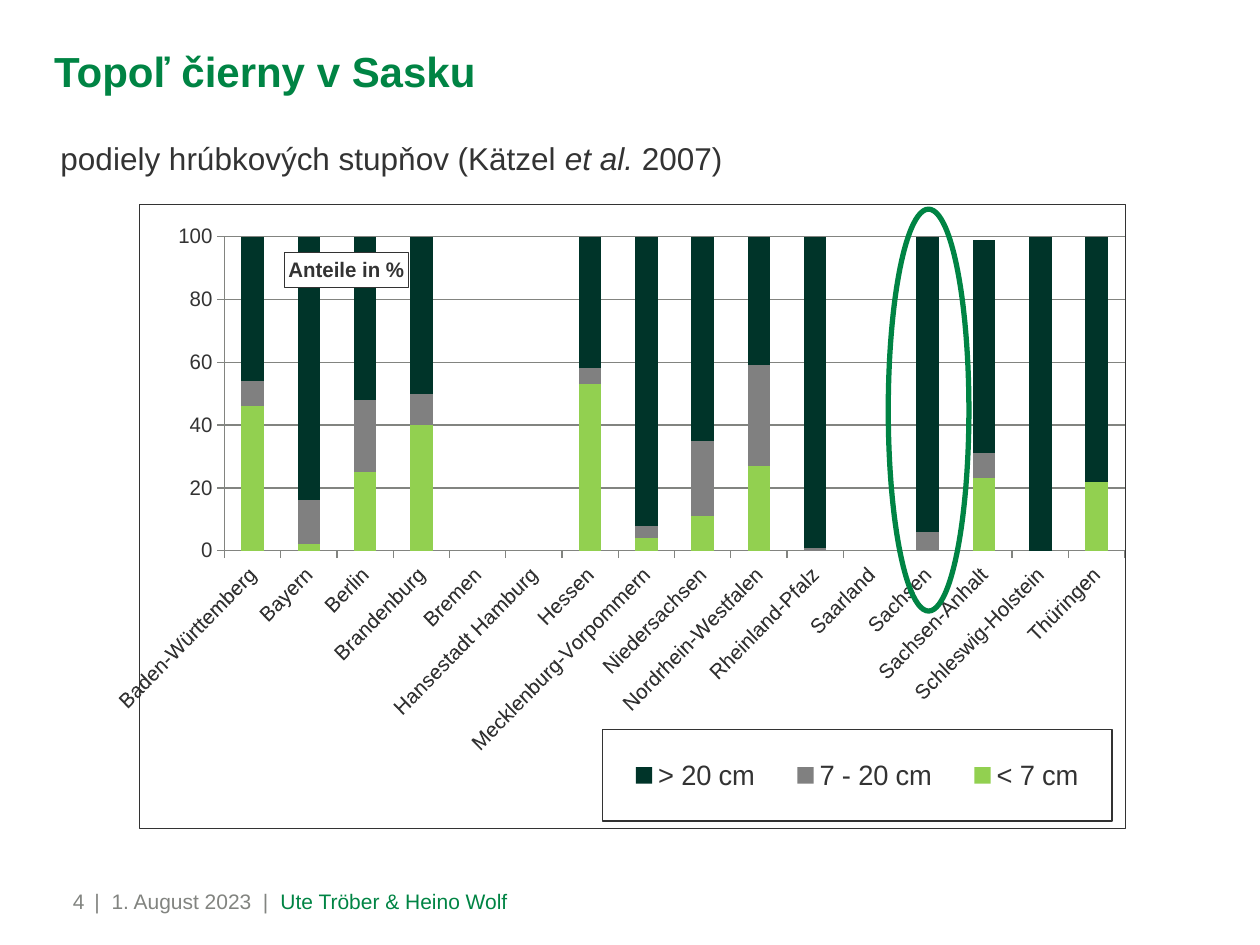
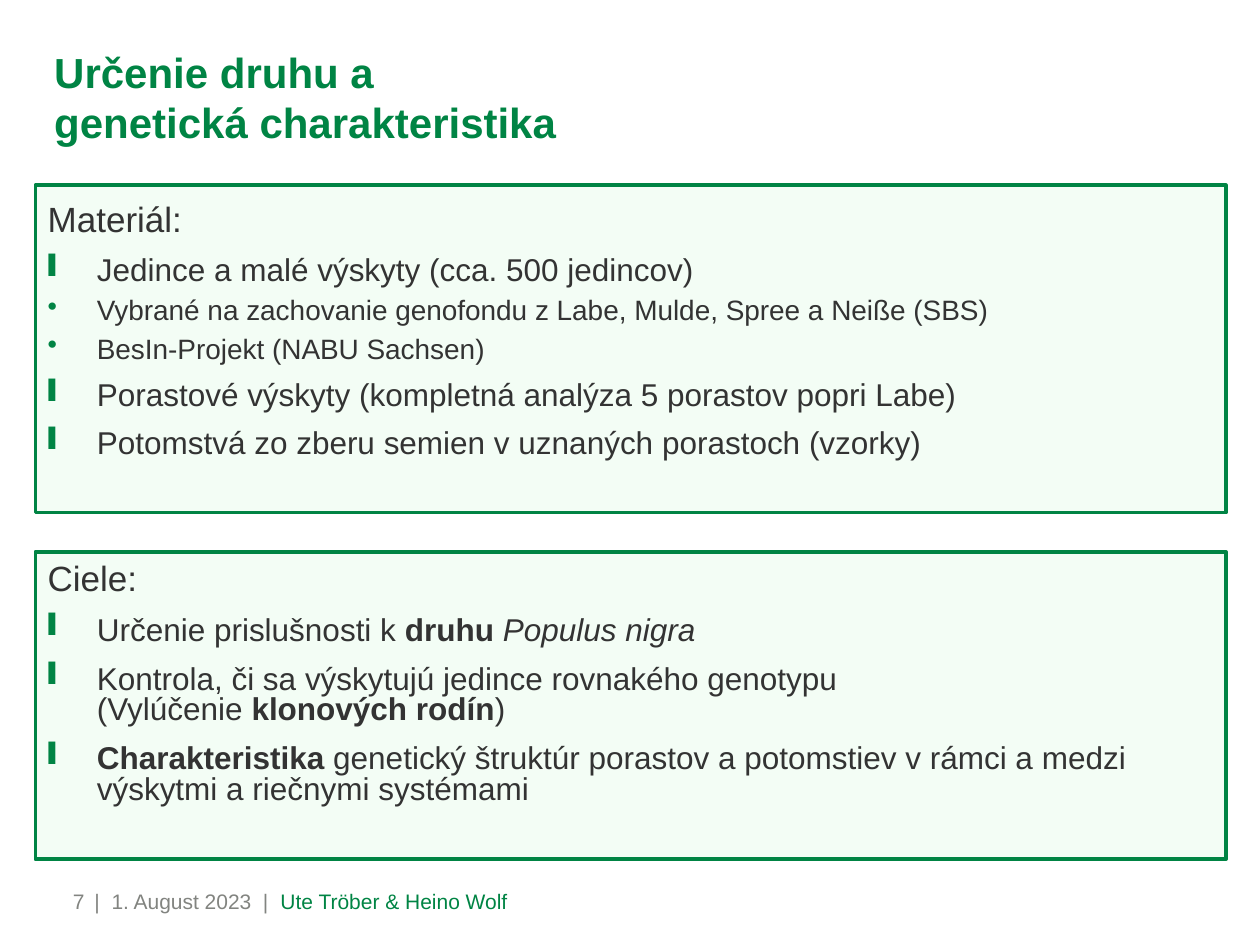
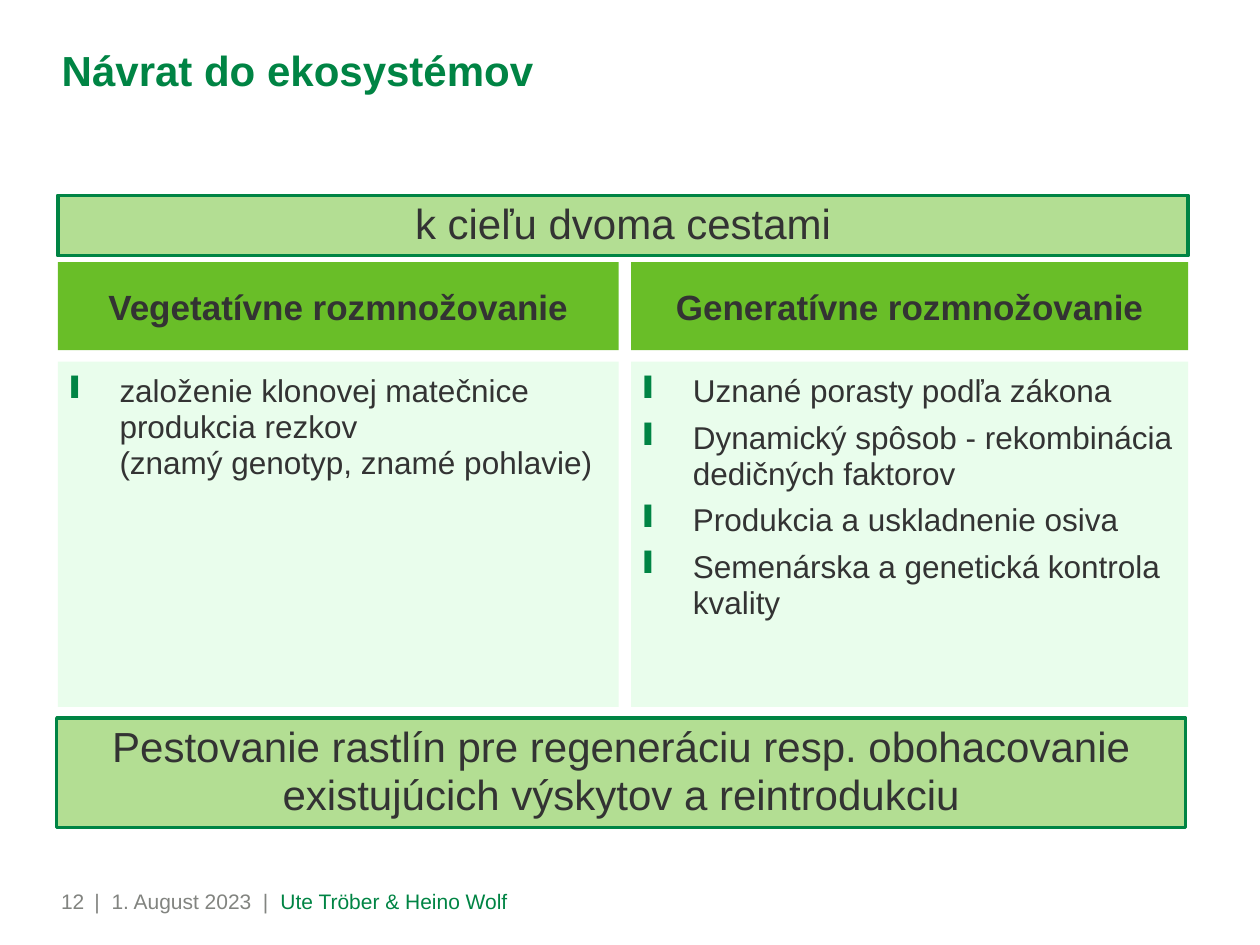
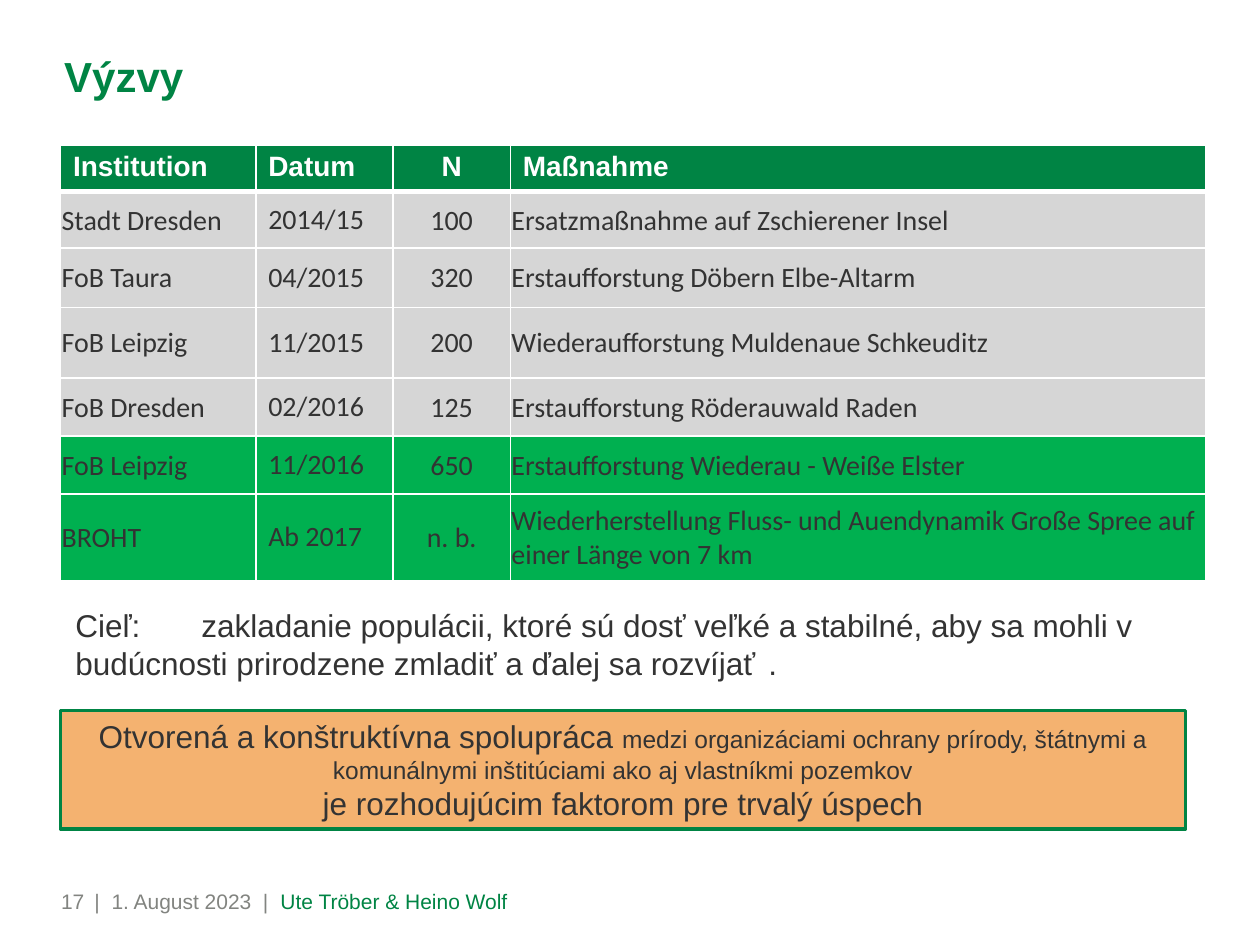
from dataclasses import dataclass
from typing import Optional

from lxml.etree import SubElement
from pptx import Presentation
from pptx.chart.data import CategoryChartData
from pptx.dml.color import RGBColor
from pptx.enum.chart import XL_CHART_TYPE, XL_LEGEND_POSITION, XL_TICK_MARK
from pptx.enum.shapes import MSO_SHAPE
from pptx.enum.text import MSO_ANCHOR, PP_ALIGN
from pptx.oxml import parse_xml
from pptx.oxml.ns import nsdecls, qn
from pptx.util import Inches, Pt

# Shared colours and fonts
GREEN = RGBColor(0x00, 0x84, 0x44)
LEAF = RGBColor(0x69, 0xBE, 0x28)
MINT = RGBColor(0xE9, 0xFD, 0xEC)
ORANGE = RGBColor(0xF4, 0xB2, 0x70)
INK = RGBColor(0x33, 0x33, 0x33)
GRAY = RGBColor(0x82, 0x84, 0x80)
WHITE = RGBColor(0xFF, 0xFF, 0xFF)
ROW_GRAY = RGBColor(0xD6, 0xD6, 0xD6)
ROW_GREEN = RGBColor(0x00, 0xB0, 0x50)
FONT = "Arial"
TABLE_FONT = "Calibri"

# Shared layout, in inches
WIDTH, HEIGHT = 10, 7.5
FOOTER_TOP, FOOTER_HEIGHT = 6.81, 0.69
INDENT = 0.39
BODY_INSETS = (0.1, 0.1, 0, 0)
BAND_INSETS = (0.1, 0.05, 0.1, 0.05)
NO_INSETS = (0, 0, 0, 0)
BAR, DOT = "❙", "•"


@dataclass
class Text:
    """A paragraph; each run is (text, flags, size), where flags are b and i."""
    runs: list
    size: float = 18
    before: float = 0
    spacing: Optional[float] = None
    bullet: Optional[str] = None
    align: Optional[PP_ALIGN] = None
    color: RGBColor = INK


# Content
FOOTER_DATE = "|  1. August 2023  |  "
FOOTER_AUTHORS = "Ute Tröber & Heino Wolf"

SUBTITLE = Text([("podiely hrúbkových stupňov (Kätzel ",), ("et al.", "i"), (" 2007)",)],
                spacing=0.95)
AXIS_TITLE = "Anteile in %"
STATES = [
    # state, < 7 cm, 7 - 20 cm, > 20 cm
    ("Baden-Württemberg", 46, 8, 46),
    ("Bayern", 2, 14, 84),
    ("Berlin", 25, 23, 52),
    ("Brandenburg", 40, 10, 50),
    ("Bremen", None, None, None),
    ("Hansestadt Hamburg", None, None, None),
    ("Hessen", 53, 5, 42),
    ("Mecklenburg-Vorpommern", 4, 4, 92),
    ("Niedersachsen", 11, 24, 65),
    ("Nordrhein-Westfalen", 27, 32, 41),
    ("Rheinland-Pfalz", None, 1, 99),
    ("Saarland", None, None, None),
    ("Sachsen", None, 6, 94),
    ("Sachsen-Anhalt", 23, 8, 68),
    ("Schleswig-Holstein", None, None, 100),
    ("Thüringen", 22, None, 78),
]
DIAMETERS = [
    ("< 7 cm", RGBColor(0x92, 0xD0, 0x50)),
    ("7 - 20 cm", RGBColor(0x80, 0x80, 0x80)),
    ("> 20 cm", RGBColor(0x00, 0x34, 0x29)),
]

MATERIAL = [
    Text([("Materiál:",)], size=20),
    Text([("Jedince a malé výskyty (cca. 500 jedincov)",)], before=6, bullet=BAR),
    Text([("Vybrané na zachovanie genofondu z Labe, Mulde, Spree a Neiße (SBS)",)],
         size=16, spacing=1.14, bullet=DOT),
    Text([("BesIn-Projekt (NABU Sachsen)",)], size=16, spacing=1.14, bullet=DOT),
    Text([("Porastové výskyty (kompletná analýza 5 porastov popri Labe)",)],
         before=6, bullet=BAR),
    Text([("Potomstvá zo zberu semien v uznaných porastoch (vzorky)",)],
         before=6, bullet=BAR),
]
GOAL_RUNS = [
    [("Určenie prislušnosti k ",), ("druhu ", "b"), ("Populus nigra", "i")],
    [("Kontrola, či sa výskytujú jedince rovnakého genotypu\n(Vylúčenie ",),
     ("klonových rodín", "b"), (")",)],
    [("Charakteristika ", "b"),
     ("genetický štruktúr porastov a potomstiev v rámci a medzi výskytmi "
      "a riečnymi systémami",)],
]
GOALS = [Text([("Ciele:",)], size=20, spacing=0.8)] + [
    Text(runs, before=10.8, spacing=0.8, bullet=BAR) for runs in GOAL_RUNS]

PATHS_HEADING = "k cieľu dvoma cestami"
PATHS = [
    # left, width, heading, points
    (0.46, 4.45, "Vegetatívne rozmnožovanie",
     ["založenie klonovej matečnice produkcia rezkov\n(znamý genotyp, znamé pohlavie)"]),
    (5.01, 4.42, "Generatívne rozmnožovanie",
     ["Uznané porasty podľa zákona",
      "Dynamický spôsob - rekombinácia dedičných faktorov",
      "Produkcia a uskladnenie osiva",
      "Semenárska a genetická kontrola kvality"]),
]
PATHS_RESULT = ("Pestovanie rastlín pre regeneráciu resp. obohacovanie "
                "existujúcich výskytov a reintrodukciu")

MEASURES_HEADER = ("Institution", "Datum", "N", "Maßnahme")
MEASURES = [
    ("Stadt Dresden", "2014/15", "100", "Ersatzmaßnahme auf Zschierener Insel"),
    ("FoB Taura", "04/2015", "320", "Erstaufforstung Döbern Elbe-Altarm"),
    ("FoB Leipzig", "11/2015", "200", "Wiederaufforstung Muldenaue Schkeuditz"),
    ("FoB Dresden", "02/2016", "125", "Erstaufforstung Röderauwald Raden"),
    ("FoB Leipzig", "11/2016", "650", "Erstaufforstung Wiederau - Weiße Elster"),
    ("BROHT", "Ab 2017", "n. b.",
     "Wiederherstellung Fluss- und Auendynamik Große Spree auf einer Länge von 7 km"),
]
PLANNED_FROM_ROW = 5
COLUMN_WIDTHS = (1.55, 1.09, 0.93, 5.52)
ROW_HEIGHTS = (0.37, 0.45, 0.47, 0.56, 0.46, 0.46, 0.69)
AIM = Text([("Cieľ:\tzakladanie populácii, ktoré sú dosť veľké a stabilné, aby sa mohli v\n"
             "budúcnosti prirodzene zmladiť a ďalej sa rozvíjať\t.",)])
COOPERATION = [
    Text([("Otvorená a konštruktívna spolupráca ",),
          ("medzi organizáciami ochrany prírody, štátnymi a komunálnymi inštitúciami "
           "ako aj vlastníkmi pozemkov", "", 14)], align=PP_ALIGN.CENTER),
    Text([("je rozhodujúcim faktorom pre trvalý úspech",)], align=PP_ALIGN.CENTER),
]


# Text helpers
def set_font(font, size, color, bold=False, name=FONT):
    font.name, font.size, font.bold = name, Pt(size), bold
    font.color.rgb = color


def add_bullet(paragraph, character):
    properties = paragraph._p.get_or_add_pPr()
    properties.set("marL", str(Inches(INDENT)))
    properties.set("indent", str(Inches(-INDENT)))
    color = SubElement(properties, qn("a:buClr"))
    SubElement(color, qn("a:srgbClr")).set("val", str(GREEN))
    SubElement(properties, qn("a:buChar")).set("char", character)


def write_paragraph(paragraph, text, name=FONT):
    if text.bullet:
        add_bullet(paragraph, text.bullet)
    paragraph.alignment = text.align or PP_ALIGN.LEFT
    paragraph.space_before = Pt(text.before)
    if text.spacing:
        paragraph.line_spacing = text.spacing
    for content, *style in text.runs:
        flags = style[0] if style else ""
        size = style[1] if len(style) > 1 else text.size
        for number, line in enumerate(content.split("\n")):
            if number:
                paragraph.add_line_break()
            run = paragraph.add_run()
            run.text = line
            set_font(run.font, size, text.color, "b" in flags, name)
            run.font.italic = "i" in flags


def write_frame(frame, texts, anchor, insets):
    frame.word_wrap = True
    frame.vertical_anchor = anchor
    (frame.margin_left, frame.margin_top,
     frame.margin_right, frame.margin_bottom) = map(Inches, insets)
    for number, text in enumerate(texts):
        write_paragraph(frame.add_paragraph() if number else frame.paragraphs[0], text)


def add_text(slide, box, texts, anchor=MSO_ANCHOR.MIDDLE, insets=NO_INSETS):
    shape = slide.shapes.add_textbox(*map(Inches, box))
    write_frame(shape.text_frame, texts, anchor, insets)


def add_panel(slide, box, fill, texts=(), outlined=False, half_clear=False,
              anchor=MSO_ANCHOR.TOP, insets=BODY_INSETS, kind=MSO_SHAPE.RECTANGLE,
              line_width=2):
    shape = slide.shapes.add_shape(kind, *map(Inches, box))
    shape.shadow.inherit = False
    if fill is None:
        shape.fill.background()
    else:
        shape.fill.solid()
        shape.fill.fore_color.rgb = fill
    if half_clear:
        color = shape._element.spPr.find(qn("a:solidFill"))[0]
        SubElement(color, qn("a:alpha")).set("val", "50000")
    if outlined:
        shape.line.color.rgb = GREEN
        shape.line.width = Pt(line_width)
    else:
        shape.line.fill.background()
    write_frame(shape.text_frame, texts, anchor, insets)


def add_slide(presentation, number, title, title_box):
    """Blank slide with the shared footer and title."""
    slide = presentation.slides.add_slide(presentation.slide_layouts[6])
    add_text(slide, (0.75, FOOTER_TOP, 4.96, FOOTER_HEIGHT),
             [Text([(FOOTER_DATE,)], size=12, color=GRAY)])
    footer = slide.shapes[-1].text_frame.paragraphs[0]
    authors = footer.add_run()
    authors.text = FOOTER_AUTHORS
    set_font(authors.font, 12, GREEN)
    add_text(slide, (0, FOOTER_TOP, 0.67, FOOTER_HEIGHT),
             [Text([(str(number),)], size=12, color=GRAY, align=PP_ALIGN.RIGHT)])
    add_text(slide, title_box, [Text([(title, "b")], size=24, color=GREEN)],
             anchor=MSO_ANCHOR.BOTTOM)
    return slide


# Chart helpers
def manual_layout(x, y, width=None, height=None, inner=False):
    target = '<c:layoutTarget val="inner"/>' if inner else ""
    size = f'<c:w val="{width}"/><c:h val="{height}"/>' if width else ""
    return parse_xml(
        f'<c:layout {nsdecls("c")}><c:manualLayout>{target}'
        f'<c:xMode val="edge"/><c:yMode val="edge"/>'
        f'<c:x val="{x}"/><c:y val="{y}"/>{size}</c:manualLayout></c:layout>')


def place(element, layout, after=None):
    for old in element.findall(qn("c:layout")):
        element.remove(old)
    if after:
        element.find(qn(after)).addnext(layout)
    else:
        element.insert(0, layout)


def framed():
    return parse_xml(
        f'<c:spPr {nsdecls("c", "a")}><a:solidFill><a:srgbClr val="{WHITE}"/></a:solidFill>'
        f'<a:ln w="{Pt(0.75)}"><a:solidFill><a:srgbClr val="{INK}"/></a:solidFill></a:ln>'
        f'</c:spPr>')


def add_diameter_chart(slide, box):
    names, *columns = zip(*STATES)
    data = CategoryChartData()
    data.categories = names
    for (name, _), values in zip(DIAMETERS, columns):
        data.add_series(name, values)
    chart = slide.shapes.add_chart(
        XL_CHART_TYPE.COLUMN_STACKED, *map(Inches, box), data).chart
    set_font(chart.font, 10, INK)
    chart.has_title = False
    chart_space = chart._chartSpace
    chart_space.find(qn("c:chart")).addnext(framed())
    place(chart_space.chart.plotArea, manual_layout(0.086, 0.051, 0.913, 0.504, inner=True))

    plot = chart.plots[0]
    plot.gap_width, plot.overlap, plot.vary_by_categories = 150, 100, False
    for series, (_, color) in zip(plot.series, DIAMETERS):
        series.format.fill.solid()
        series.format.fill.fore_color.rgb = color

    for axis in (chart.category_axis, chart.value_axis):
        axis.major_tick_mark = XL_TICK_MARK.OUTSIDE
        axis.format.line.color.rgb = GRAY
        set_font(axis.tick_labels.font, 12, INK)
    labels = chart.category_axis._element.find(qn("c:txPr")).find(qn("a:bodyPr"))
    labels.set("rot", str(-45 * 60000))
    labels.set("vert", "horz")

    value_axis = chart.value_axis
    value_axis.minimum_scale, value_axis.maximum_scale = 0, 100
    value_axis.major_unit = 20
    value_axis.has_major_gridlines = True
    value_axis.major_gridlines.format.line.color.rgb = GRAY
    title = value_axis.axis_title
    write_paragraph(title.text_frame.paragraphs[0], Text([(AXIS_TITLE, "b")], size=12))
    title_body = title._element.find(qn("c:tx")).find(qn("c:rich")).find(qn("a:bodyPr"))
    title_body.set("rot", "0")
    title_body.set("vert", "horz")
    title.format.fill.solid()
    title.format.fill.fore_color.rgb = WHITE
    title.format.line.color.rgb = INK
    title.format.line.width = Pt(0.75)
    place(title._element, manual_layout(0.147, 0.077), after="c:tx")

    chart.has_legend = True
    legend = chart.legend
    legend.position = XL_LEGEND_POSITION.RIGHT
    legend.include_in_layout = False
    set_font(legend.font, 16, INK)
    place(legend._element, manual_layout(0.469, 0.842, 0.517, 0.146), after="c:legendPos")
    legend._element.find(qn("c:txPr")).addprevious(framed())


# Table helpers
def set_borders(cell, bottom_width):
    properties = cell._tc.get_or_add_tcPr()
    sides = (("L", 1), ("R", 1), ("T", 1), ("B", bottom_width))
    for position, (side, width) in enumerate(sides):
        properties.insert(position, parse_xml(
            f'<a:ln{side} {nsdecls("a")} w="{Pt(width)}"><a:solidFill>'
            f'<a:srgbClr val="{WHITE}"/></a:solidFill></a:ln{side}>'))


def add_measures_table(slide, left, top):
    rows = [MEASURES_HEADER] + MEASURES
    table = slide.shapes.add_table(
        len(rows), len(COLUMN_WIDTHS), Inches(left), Inches(top),
        Inches(sum(COLUMN_WIDTHS)), Inches(sum(ROW_HEIGHTS))).table
    for column, width in zip(table.columns, COLUMN_WIDTHS):
        column.width = Inches(width)
    for row, height in zip(table.rows, ROW_HEIGHTS):
        row.height = Inches(height)
    for row_number, values in enumerate(rows):
        is_header = row_number == 0
        row_fill = ROW_GREEN if row_number >= PLANNED_FROM_ROW else ROW_GRAY
        for column_number, value in enumerate(values):
            cell = table.cell(row_number, column_number)
            padded = is_header or column_number == 1
            insets = BAND_INSETS if padded else (0.01, 0.01, 0.01, 0)
            (cell.margin_left, cell.margin_top,
             cell.margin_right, cell.margin_bottom) = map(Inches, insets)
            cell.vertical_anchor = MSO_ANCHOR.TOP if is_header else MSO_ANCHOR.MIDDLE
            cell.fill.solid()
            cell.fill.fore_color.rgb = GREEN if is_header else row_fill
            set_borders(cell, 3 if is_header else 1)
            text = Text([(value, "b" if is_header else "")], size=16,
                        color=WHITE if is_header else INK,
                        align=PP_ALIGN.CENTER if column_number == 2 else PP_ALIGN.LEFT)
            write_paragraph(cell.text_frame.paragraphs[0], text,
                            FONT if is_header else TABLE_FONT)


# Slides
def build_diameter_slide(presentation):
    slide = add_slide(presentation, 4, "Topoľ čierny v Sasku", (0.43, 0.13, 5.28, 0.63))
    add_text(slide, (0.48, 0.92, 5.78, 0.49), [SUBTITLE], anchor=MSO_ANCHOR.BOTTOM)
    add_diameter_chart(slide, (0.91, 1.62, 8.03, 4.96))
    add_panel(slide, (7.05, 1.66, 0.64, 3.19), None, outlined=True,
              kind=MSO_SHAPE.OVAL, line_width=3)


def build_material_slide(presentation):
    slide = add_slide(presentation, 7, "Určenie druhu a\ngenetická charakteristika",
                      (0.43, 0.36, 7.28, 0.81))
    for top, height, texts in ((4.38, 2.44, GOALS), (1.47, 2.6, MATERIAL)):
        add_panel(slide, (0.28, top, 9.45, height), MINT, texts,
                  outlined=True, half_clear=True)


def build_paths_slide(presentation):
    slide = add_slide(presentation, 12, "Návrat do ekosystémov", (0.49, 0.2, 5.54, 0.55))
    for left, width, heading, points in PATHS:
        add_panel(slide, (left, 2.87, width, 2.74), MINT,
                  [Text([(point,)], spacing=0.95, before=6 if number else 0, bullet=BAR)
                   for number, point in enumerate(points)])
        add_panel(slide, (left, 2.08, width, 0.7), LEAF,
                  [Text([(heading, "b")], size=20, align=PP_ALIGN.CENTER)],
                  anchor=MSO_ANCHOR.MIDDLE, insets=NO_INSETS)
    for box, sentence in (((0.46, 1.55, 8.97, 0.48), PATHS_HEADING),
                          ((0.45, 5.7, 8.96, 0.87), PATHS_RESULT)):
        add_panel(slide, box, LEAF,
                  [Text([(sentence,)], size=24, spacing=0.95, align=PP_ALIGN.CENTER)],
                  outlined=True, half_clear=True, insets=BAND_INSETS)


def build_challenges_slide(presentation):
    slide = add_slide(presentation, 17, "Výzvy", (0.51, 0.41, 4.52, 0.39))
    add_measures_table(slide, 0.48, 1.15)
    add_text(slide, (0.5, 4.76, 8.93, 0.71), [AIM],
             anchor=MSO_ANCHOR.TOP, insets=BAND_INSETS)
    add_panel(slide, (0.48, 5.64, 8.93, 0.94), ORANGE, COOPERATION,
              outlined=True, insets=BAND_INSETS)


def main():
    presentation = Presentation()
    presentation.slide_width, presentation.slide_height = Inches(WIDTH), Inches(HEIGHT)
    build_diameter_slide(presentation)
    build_material_slide(presentation)
    build_paths_slide(presentation)
    build_challenges_slide(presentation)
    presentation.save("out.pptx")


if __name__ == "__main__":
    main()
